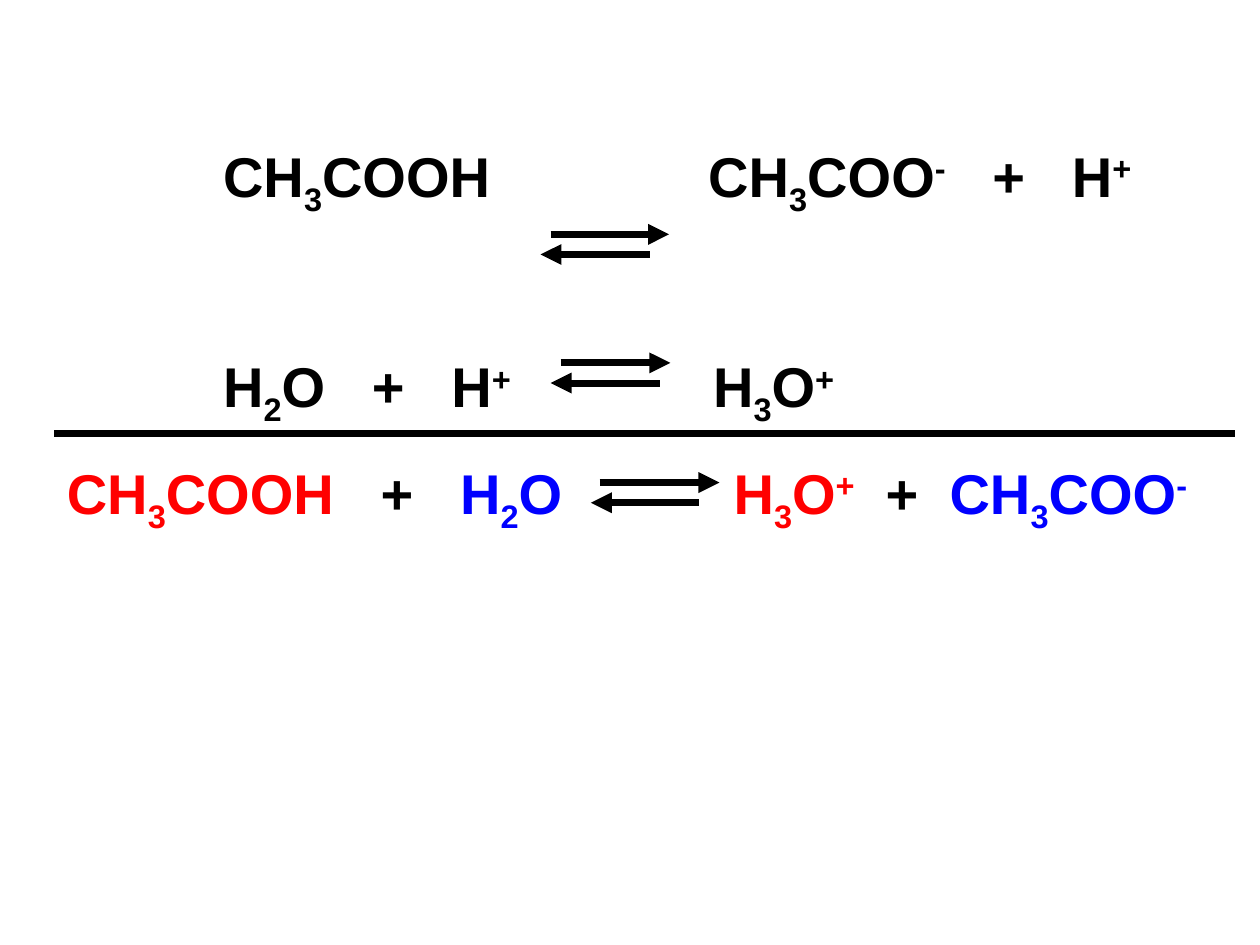
from lxml import etree
from pptx import Presentation
from pptx.dml.color import RGBColor
from pptx.enum import shapes, text
from pptx.oxml.ns import qn
from pptx.util import Inches, Pt

COLORS = {"black": "000000", "red": "FF0000", "blue": "0000FF"}
SUB, SUPER = -25000, 30000
FONT_SIZE = 32
SPACE_WIDTH = 0.278 * FONT_SIZE  # width of one Arial space in points

# Each species is a list of (text, baseline shift)
ACID = [("CH", 0), ("3", SUB), ("COOH", 0)]
ACETATE = [("CH", 0), ("3", SUB), ("COO", 0), ("-", SUPER)]
WATER = [("H", 0), ("2", SUB), ("O", 0)]
HYDRONIUM = [("H", 0), ("3", SUB), ("O", 0), ("+", SUPER)]
PROTON = [("H", 0), ("+", SUPER)]
PLUS = [("+", 0)]


def write_equation(paragraph, terms):
    """Write (gap, species, color) terms; a gap is one widened space."""
    for gap, species, color in terms:
        spacer = [(" ", 0)] if gap else []
        for label, shift in spacer + species:
            run = paragraph.add_run()
            run.text = label
            formats = {"name": "Arial", "size": Pt(FONT_SIZE), "bold": True}
            for name, value in formats.items():
                setattr(run.font, name, value)
            run.font.color.rgb = RGBColor.from_string(COLORS[color])
            properties = run._r.get_or_add_rPr()
            if label == " ":
                properties.set("spc", str(round((gap - 1) * SPACE_WIDTH * 100)))
            if shift:
                properties.set("baseline", str(shift))


def add_line(slide, start, end, y, arrow=None):
    """Draw a thick horizontal line; arrow is headEnd, tailEnd or None."""
    line = slide.shapes.add_connector(
        shapes.MSO_CONNECTOR.STRAIGHT,
        Inches(start), Inches(y), Inches(end), Inches(y))
    line.line.color.rgb = RGBColor.from_string(COLORS["black"])
    line.line.width = Pt(4)
    if arrow:
        etree.SubElement(line.line._get_or_add_ln(), qn(f"a:{arrow}"),
                         type="triangle")
    etree.SubElement(line._element.spPr, qn("a:effectLst"))


presentation = Presentation()
presentation.slide_width, presentation.slide_height = Inches(10), Inches(7.5)
slide = presentation.slides.add_slide(presentation.slide_layouts[0])
title, subtitle = slide.placeholders

# Placeholder frames
frames = [
    (title, (0.67, 1.47, 8.58, 2.76),
     {"vertical_anchor": text.MSO_ANCHOR.BOTTOM, "margin_bottom": Inches(0.83)}),
    (subtitle, (0.43, 3.59, 9.29, 1.92),
     {"vertical_anchor": text.MSO_ANCHOR.TOP, "margin_top": Inches(0.05)}),
]
for shape, box, formats in frames:
    shape.left, shape.top, shape.width, shape.height = map(Inches, box)
    formats |= {"word_wrap": True, "auto_size": text.MSO_AUTO_SIZE.NONE,
                "margin_left": Inches(0.1), "margin_right": Inches(0.1)}
    for name, value in formats.items():
        setattr(shape.text_frame, name, value)

# Half equations in the title, overall equation in the subtitle
equations = [
    (title.text_frame.paragraphs[0], 1, 0,
     [(0, ACID, "black"), (14, ACETATE, "black"),
      (3, PLUS, "black"), (3, PROTON, "black")]),
    (title.text_frame.add_paragraph(), 1, 76.6,
     [(0, WATER, "black"), (3, PLUS, "black"),
      (3, PROTON, "black"), (13, HYDRONIUM, "black")]),
    (subtitle.text_frame.paragraphs[0], 0, 0,
     [(0, ACID, "red"), (3, PLUS, "black"), (3, WATER, "blue"),
      (11, HYDRONIUM, "red"), (2, PLUS, "black"), (2, ACETATE, "blue")]),
]
for paragraph, indent, space_before, terms in equations:
    paragraph.alignment = text.PP_ALIGN.LEFT
    paragraph.space_before = Pt(space_before)
    properties = paragraph._p.get_or_add_pPr()
    properties.set("marL", str(Inches(indent)))
    properties.set("indent", "0")
    write_equation(paragraph, terms)

# Equilibrium arrows: forward above, reverse below
for y, forward, reverse in [
    (1.86, (4.37, 5.31), (4.29, 5.16)),
    (2.88, (4.45, 5.32), (4.37, 5.24)),
    (3.83, (4.76, 5.71), (4.69, 5.55)),
]:
    add_line(slide, *forward, y, "tailEnd")
    add_line(slide, *reverse, y + 0.16, "headEnd")

# Sum line
add_line(slide, 0.43, 9.8, 3.44)

presentation.save("out.pptx")
